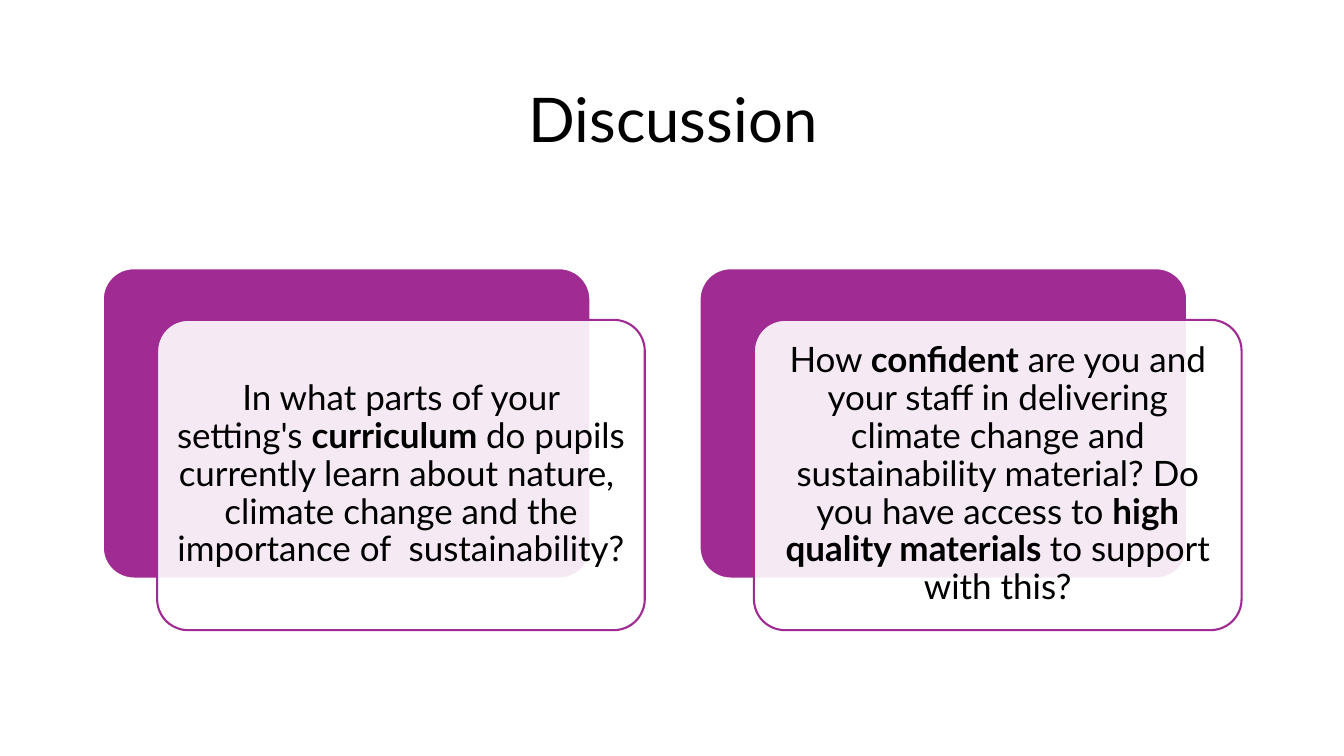
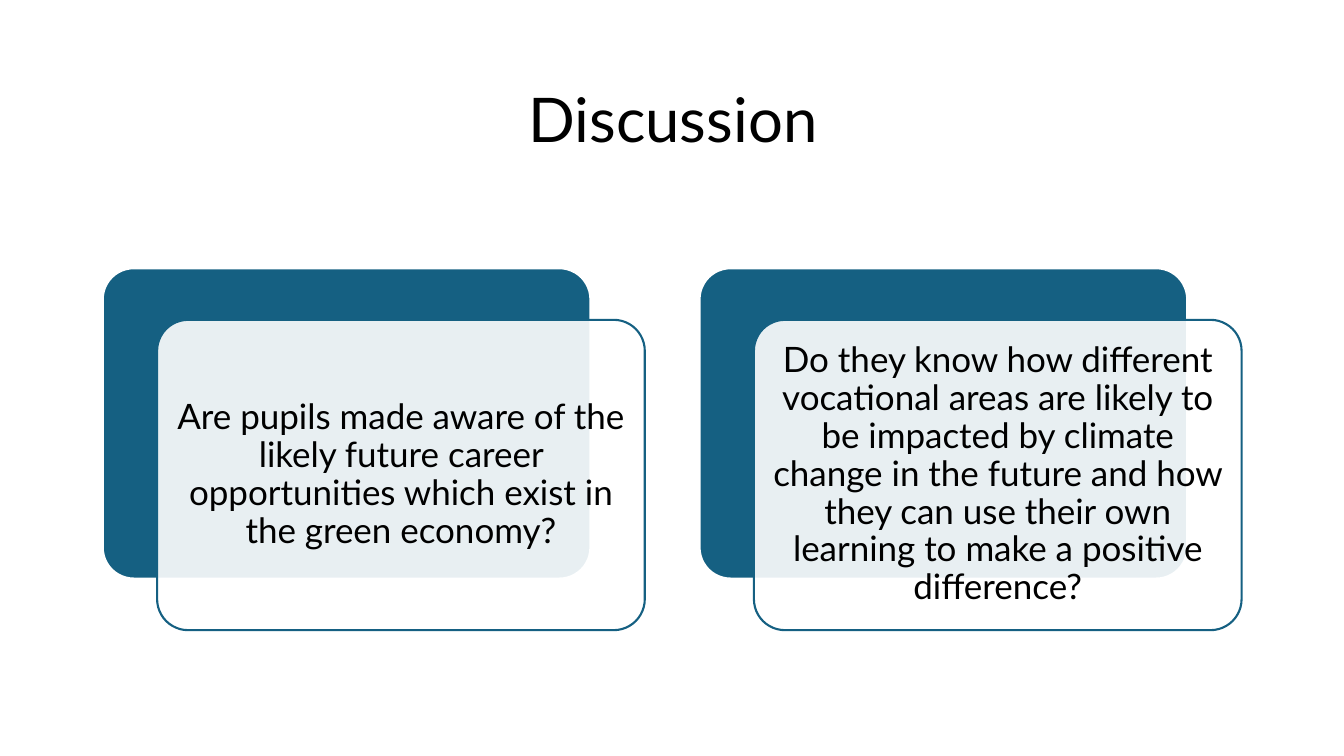
from dataclasses import dataclass

from lxml.etree import SubElement
from pptx import Presentation
from pptx.dml.color import RGBColor
from pptx.enum.shapes import MSO_SHAPE as Preset
from pptx.enum.text import MSO_ANCHOR as Anchor, PP_ALIGN as Align
from pptx.oxml.ns import qn
from pptx.shapes.autoshape import Shape
from pptx.slide import Slide
from pptx.util import Cm, Pt

# Shared style
FONT = "Lato"
BLACK, WHITE = "000000", "FFFFFF"
PURPLE, BLUE = "A02B93", "156082"
BOLD_MARK = "*"

# Card grid, in centimetres
CARD_LEFT, CARD_TOP = 2.59, 6.76
CARD_WIDTH, CARD_HEIGHT = 12.29, 7.82
CARD_STEP = 15.04
FRONT_SHIFT_X, FRONT_SHIFT_Y = 1.37, 1.3
FRONT_OPACITY = 90


@dataclass(frozen=True)
class Discussion:
    accent: str
    questions: tuple[str, ...]  # words between asterisks are bold


DISCUSSIONS = (
    Discussion(PURPLE, (
        "In what parts of your setting's *curriculum* do pupils currently learn "
        "about nature,  climate change and the importance of  sustainability?",
        "How *confident* are you and your staff in delivering climate change and "
        "sustainability material? Do you have access to "
        "*high quality materials *to support with this?",
    )),
    Discussion(BLUE, (
        "Are pupils made aware of the likely future career opportunities "
        "which exist in the green economy?",
        "Do they know how different vocational areas are likely to be impacted "
        "by climate change in the future and how they can use their own "
        "learning to make a positive difference?",
    )),
)


def color(value: str) -> RGBColor:
    return RGBColor.from_string(value)


def write_text(shape: Shape, text: str, *, size: float, inset: float = 0.25,
               font_color: str = BLACK) -> None:
    """Write one centred paragraph, with bold between asterisks."""
    frame = shape.text_frame
    frame.word_wrap = True
    frame.vertical_anchor = Anchor.MIDDLE
    frame.margin_left = frame.margin_right = Cm(inset)
    frame.margin_top = frame.margin_bottom = Cm(inset)
    paragraph = frame.paragraphs[0]
    paragraph.alignment = Align.CENTER
    paragraph.line_spacing = 0.9
    for index, part in enumerate(text.split(BOLD_MARK)):
        run = paragraph.add_run()
        run.text = part
        run.font.name = FONT
        run.font.size = Pt(size)
        run.font.bold = index % 2 == 1
        run.font.color.rgb = color(font_color)


def add_panel(slide: Slide, left: float, top: float, *, fill: str, line: str,
              opacity: int = 100) -> Shape:
    """Add one rounded panel of the card size."""
    panel = slide.shapes.add_shape(Preset.ROUNDED_RECTANGLE, Cm(left), Cm(top),
                                   Cm(CARD_WIDTH), Cm(CARD_HEIGHT))
    panel.adjustments[0] = 0.1
    panel.shadow.inherit = False
    panel.fill.solid()
    panel.fill.fore_color.rgb = color(fill)
    panel.line.color.rgb = color(line)
    panel.line.width = Pt(1.5)
    if opacity < 100:
        fill_color = panel.element.spPr.find(qn("a:solidFill")).find(qn("a:srgbClr"))
        SubElement(fill_color, qn("a:alpha")).set("val", str(opacity * 1000))
    return panel


def add_card(slide: Slide, left: float, question: str, accent: str) -> None:
    """Add a coloured panel with a translucent question panel over it."""
    add_panel(slide, left, CARD_TOP, fill=accent, line=WHITE)
    front = add_panel(slide, left + FRONT_SHIFT_X, CARD_TOP + FRONT_SHIFT_Y,
                      fill=WHITE, line=accent, opacity=FRONT_OPACITY)
    write_text(front, question, size=25)


def add_title(slide: Slide, text: str) -> None:
    title = slide.shapes.add_textbox(Cm(4.24), Cm(1.52), Cm(25.45), Cm(3.15))
    write_text(title, text, size=44)


def main() -> None:
    presentation = Presentation()
    presentation.slide_width, presentation.slide_height = Cm(33.87), Cm(19.05)
    blank_layout = presentation.slide_layouts[6]

    # One slide for each discussion
    for discussion in DISCUSSIONS:
        slide = presentation.slides.add_slide(blank_layout)
        add_title(slide, "Discussion")
        for column, question in enumerate(discussion.questions):
            add_card(slide, CARD_LEFT + column * CARD_STEP, question,
                     discussion.accent)

    presentation.save("out.pptx")


if __name__ == "__main__":
    main()
